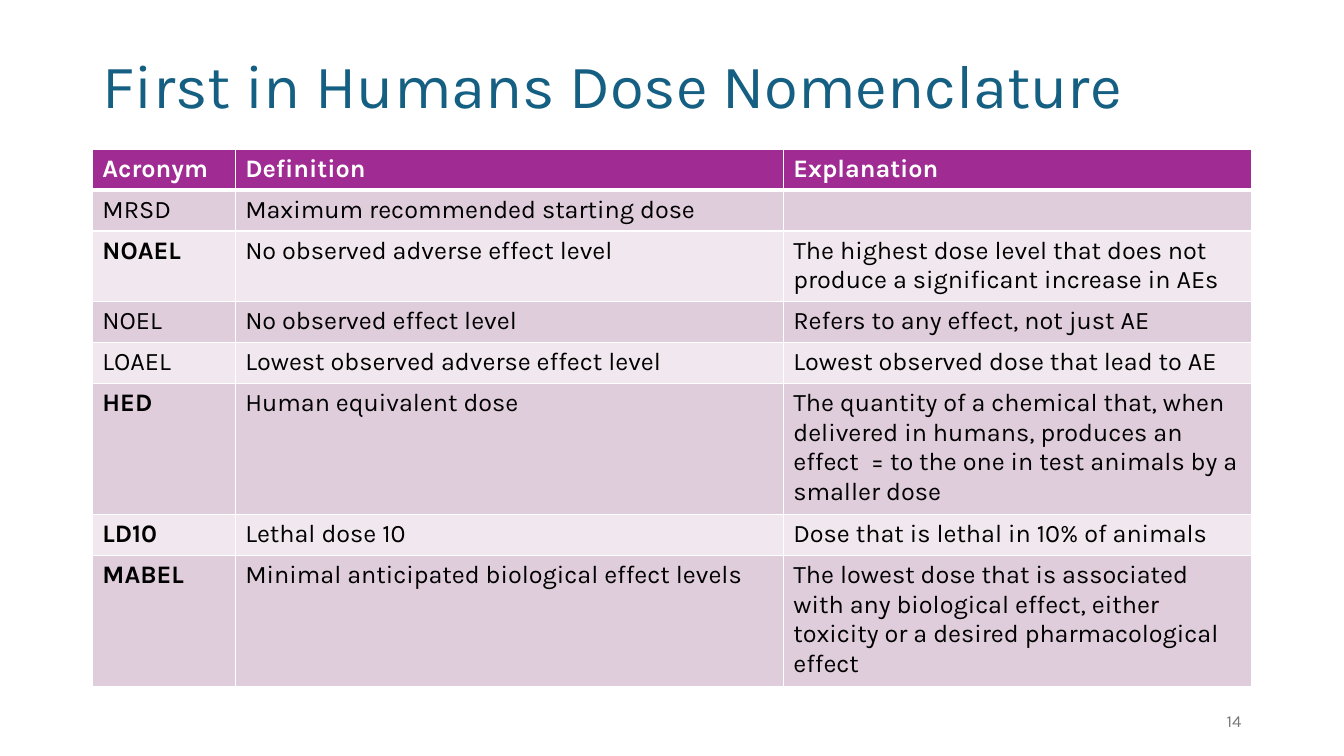
from dataclasses import dataclass

from lxml import etree
from pptx import Presentation
from pptx import util as u
from pptx.dml.color import RGBColor
from pptx.enum import text
from pptx.oxml import ns


@dataclass(frozen=True)
class Theme:
    font: str = "Karla"
    title: str = "156082"
    head: str = "A02B93"
    odd: str = "DFCDDC"
    even: str = "F0E8EE"
    white: str = "FFFFFF"
    black: str = "000000"
    grey: str = "797979"
    large: int = 44
    body: int = 18
    small: int = 12


@dataclass(frozen=True)
class Box:
    col: float
    row: float
    wide: float
    high: float


@dataclass(frozen=True)
class Term:
    name: str
    sense: str
    note: str = ""
    bold: bool = False


THEME = Theme()
COLS, ROWS = 160, 90
WIDTH, HEIGHT = u.Inches(13.33), u.Inches(7.5)
TITLE = Box(11, 1.8, 138, 17.4)
TABLE = Box(11, 17.76, 138, 4.87)
NUMBER = Box(113, 83.4, 36, 4.8)
SPANS = (17, 65.25, 55.75)
HEAD = Term("Acronym", "Definition", "Explanation", True)
TERMS = (
    Term("MRSD", "Maximum recommended starting dose"),
    Term("NOAEL", "No observed adverse effect level",
         "The highest dose level that does not produce a significant increase in AEs", True),
    Term("NOEL", "No observed effect level", "Refers to any effect, not just AE"),
    Term("LOAEL", "Lowest observed adverse effect level", "Lowest observed dose that lead to AE"),
    Term("HED", "Human equivalent dose",
         "The quantity of a chemical that, when delivered in humans, produces an effect  "
         "= to the one in test animals by a smaller dose", True),
    Term("LD10", "Lethal dose 10", "Dose that is lethal in 10% of animals", True),
    Term("MABEL", "Minimal anticipated biological effect levels",
         "The lowest dose that is associated with any biological effect, either toxicity "
         "or a desired pharmacological effect", True),
)


def across(cols: float) -> int:
    return round(WIDTH * cols / COLS)


def down(rows: float) -> int:
    return round(HEIGHT * rows / ROWS)


def place(box: Box) -> dict:
    return {"left": across(box.col), "top": down(box.row),
            "width": across(box.wide), "height": down(box.high)}


def apply(item, form: dict) -> None:
    for key, value in form.items():
        setattr(item, key, value)


def write(frame, words: str, size: int, color: str, bold: bool = False, **form) -> None:
    line = frame.paragraphs[0]
    apply(line, form)
    if words:
        run = line.add_run()
        run.text = words
        apply(run.font, {"name": THEME.font, "size": u.Pt(size), "bold": bold})
        run.font.color.rgb = RGBColor.from_string(color)


def edge(cell, base: int) -> None:
    props = cell._tc.get_or_add_tcPr()
    for spot, (side, width) in enumerate({"L": 1, "R": 1, "T": 1, "B": base}.items()):
        line = etree.Element(ns.qn(f"a:ln{side}"), w=str(u.Pt(width)))
        fill = etree.SubElement(line, ns.qn("a:solidFill"))
        etree.SubElement(fill, ns.qn("a:srgbClr"), val=THEME.white)
        props.insert(spot, line)


def add_title(slide, words: str) -> None:
    title = slide.shapes.title
    apply(title, place(TITLE))
    apply(title.text_frame, {"word_wrap": True, "vertical_anchor": text.MSO_ANCHOR.MIDDLE})
    write(title.text_frame, words, THEME.large, THEME.title,
          alignment=text.PP_ALIGN.LEFT, line_spacing=0.9)


def add_terms(slide) -> None:
    lines = (HEAD, *TERMS)
    area = place(TABLE) | {"height": down(TABLE.high) * len(lines)}
    grid = slide.shapes.add_table(len(lines), len(SPANS), **area).table
    for column, span in zip(grid.columns, SPANS):
        column.width = across(span)
    for i, term in enumerate(lines):
        grid.rows[i].height = down(TABLE.high)
        top = i == 0
        fill = THEME.head if top else (THEME.even, THEME.odd)[i % 2]
        color = THEME.white if top else THEME.black
        for j, words in enumerate((term.name, term.sense, term.note)):
            cell = grid.cell(i, j)
            cell.fill.solid()
            cell.fill.fore_color.rgb = RGBColor.from_string(fill)
            edge(cell, 3 if i <= 0 else 1)
            write(cell.text_frame, words, THEME.body, color, top or (term.bold and j == 0))


def add_number(slide, words: str) -> None:
    frame = slide.shapes.add_textbox(**place(NUMBER)).text_frame
    apply(frame, {"word_wrap": True, "vertical_anchor": text.MSO_ANCHOR.MIDDLE})
    write(frame, words, THEME.small, THEME.grey, alignment=text.PP_ALIGN.RIGHT)


def main() -> None:
    deck = Presentation()
    apply(deck, {"slide_width": WIDTH, "slide_height": HEIGHT})
    slide = deck.slides.add_slide(deck.slide_layouts.get_by_name("Title Only"))
    add_title(slide, "First in Humans Dose Nomenclature")
    add_number(slide, "14")
    add_terms(slide)
    deck.save("out.pptx")


if __name__ == "__main__":
    main()
